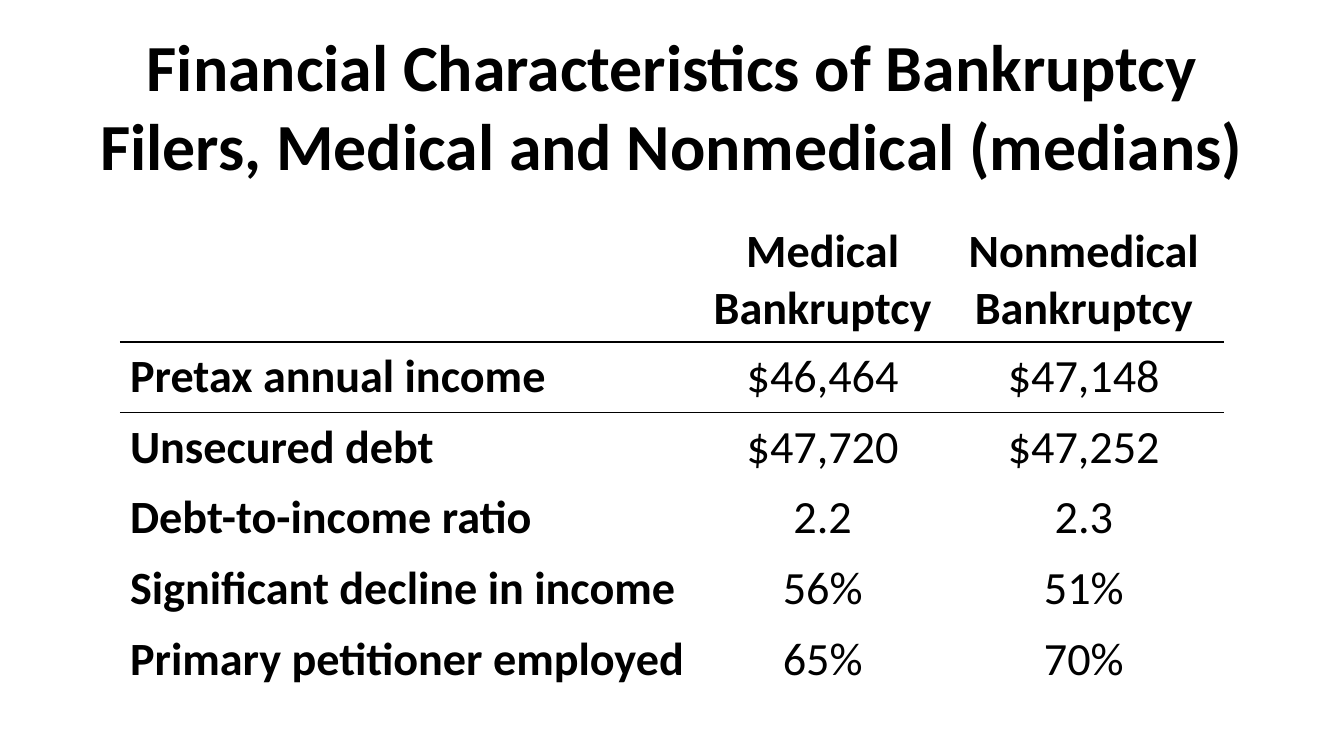
from lxml import etree
from pptx import Presentation
from pptx import util as u
from pptx.dml.color import RGBColor
from pptx.enum import text
from pptx.oxml.ns import qn

BLACK = "000000"
NO_STYLE = "{2D5ABB26-0587-4C30-8999-92F81FD0307C}"
TITLE = "Financial Characteristics of Bankruptcy Filers, Medical and Nonmedical (medians)"
ROWS = [
    ("", "Medical Bankruptcy", "Nonmedical Bankruptcy"),
    ("Pretax annual income", "$46,464", "$47,148"),
    ("Unsecured debt", "$47,720", "$47,252"),
    ("Debt-to-income ratio", "2.2", "2.3"),
    ("Significant decline in income", "56%", "51%"),
    ("Primary petitioner employed", "65%", "70%"),
]
COL_WIDTHS = (5.77, 2.4, 2.78)
HEADER_HEIGHT, ROW_HEIGHT = 1.22, 0.7
RULES = {0: 1.5, 1: 0.75}


def color(value):
    return RGBColor.from_string(value)


def write(tf, content, size, bold, align):
    p = tf.paragraphs[0]
    p.alignment = align
    r = p.add_run()
    r.text = content
    fmt = {"name": "Calibri", "size": u.Pt(size), "bold": bold}
    for key, value in fmt.items():
        setattr(r.font, key, value)
    r.font.color.rgb = color(BLACK)
    return p


def add_title(s, x, y, w, h):
    tf = s.shapes.add_textbox(*map(u.Inches, (x, y, w, h))).text_frame
    tf.word_wrap = True
    tf.vertical_anchor = text.MSO_ANCHOR.MIDDLE
    p = write(tf, TITLE, 47, True, text.PP_ALIGN.CENTER)
    p.space_before = p.space_after = u.Pt(4)


def rule_below(cell, width):
    ln = etree.Element(qn("a:lnB"), w=str(u.Pt(width)))
    fill = etree.SubElement(ln, qn("a:solidFill"))
    etree.SubElement(fill, qn("a:srgbClr"), val=BLACK)
    cell._tc.get_or_add_tcPr().insert(0, ln)


def add_financial_table(s, x, y):
    heights = [HEADER_HEIGHT] + [ROW_HEIGHT] * (len(ROWS) - 1)
    box = map(u.Inches, (x, y, sum(COL_WIDTHS), sum(heights)))
    table = s.shapes.add_table(len(ROWS), len(COL_WIDTHS), *box).table
    table._tbl.tblPr.find(qn("a:tableStyleId")).text = NO_STYLE
    table.first_row = table.horz_banding = False
    for col, width in zip(table.columns, COL_WIDTHS):
        col.width = u.Inches(width)
    for i, values in enumerate(ROWS):
        table.rows[i].height = u.Inches(heights[i])
        for j, value in enumerate(values):
            cell = table.cell(i, j)
            cell.fill.background()
            cell.vertical_anchor = text.MSO_ANCHOR.MIDDLE if i else text.MSO_ANCHOR.TOP
            if value:
                align = text.PP_ALIGN.CENTER if j else text.PP_ALIGN.LEFT
                write(cell.text_frame, value, 33, i == 0 or j == 0, align)
            if i in RULES:
                rule_below(cell, RULES[i])


def main():
    prs = Presentation()
    prs.slide_width, prs.slide_height = u.Inches(13.33), u.Inches(7.5)
    s = prs.slides.add_slide(prs.slide_layouts[6])
    add_title(s, 0.67, 0.2, 12, 1.67)
    add_financial_table(s, 1.19, 2.17)
    prs.save("out.pptx")


if __name__ == "__main__":
    main()
